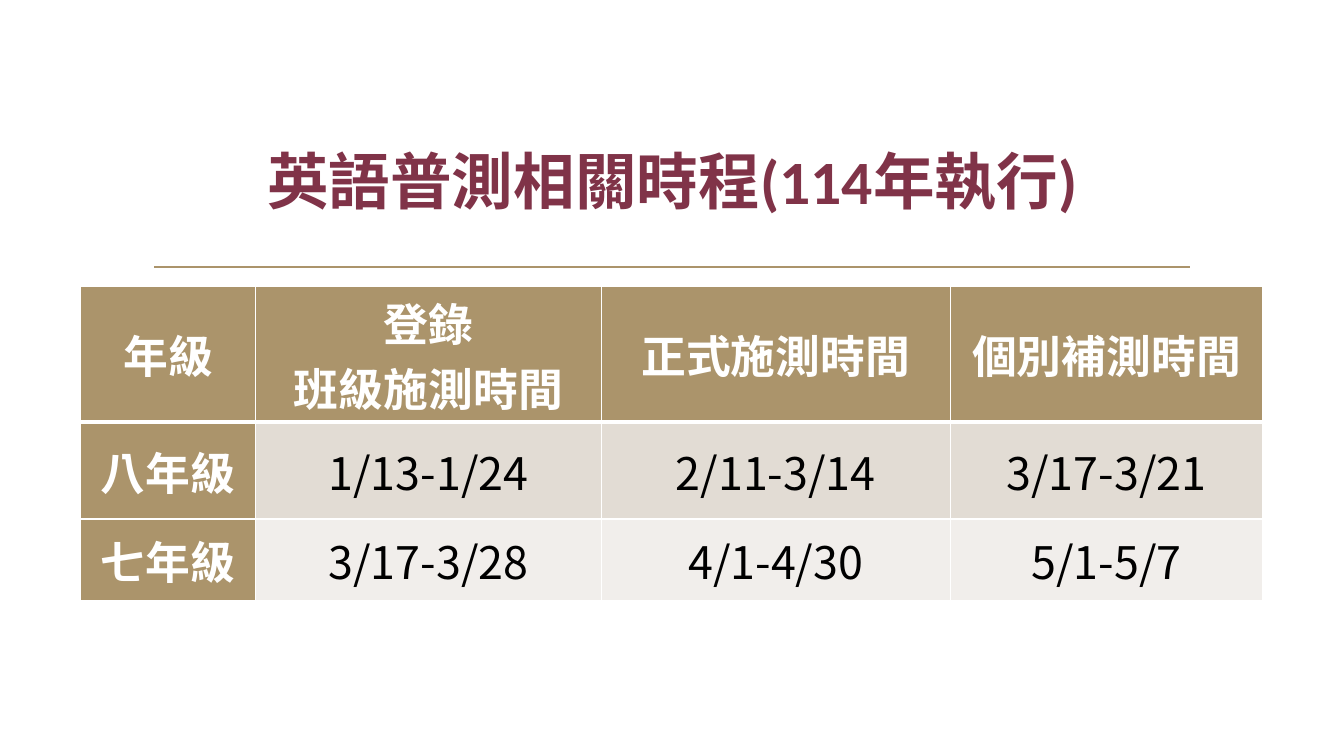
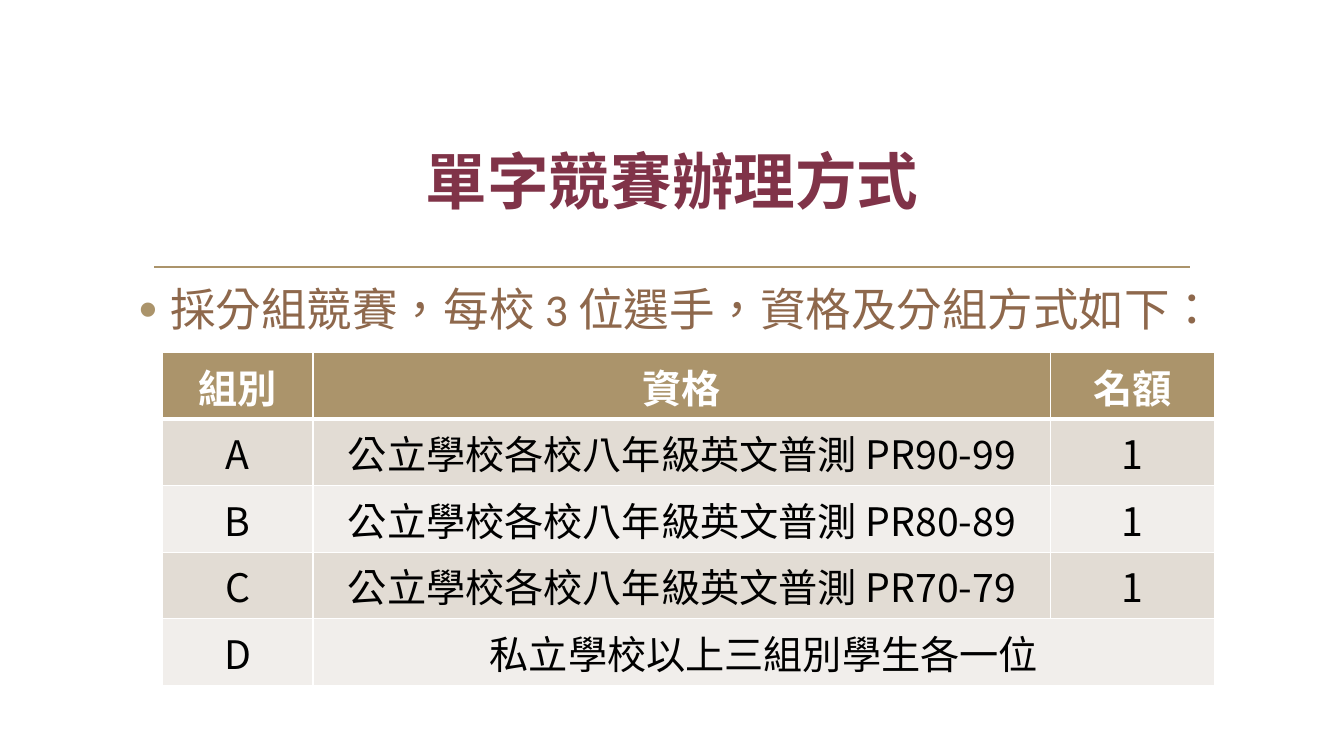
from lxml import etree
from pptx import Presentation
from pptx.dml.color import RGBColor
from pptx.enum.shapes import MSO_CONNECTOR
from pptx.enum.text import MSO_ANCHOR, MSO_AUTO_SIZE, PP_ALIGN
from pptx.oxml.ns import qn
from pptx.util import Pt

CENTER, LEFT = PP_ALIGN.CENTER, PP_ALIGN.LEFT
MIDDLE, TOP = MSO_ANCHOR.MIDDLE, MSO_ANCHOR.TOP
STRAIGHT = MSO_CONNECTOR.STRAIGHT
NO_AUTOFIT = MSO_AUTO_SIZE.NONE

# Shared look
GOLD, WINE, BROWN = "AB946B", "803348", "8E684C"
WHITE, BLACK = "FFFFFF", "000000"
BANDS = ("E2DCD4", "F1EEEB")
LATIN, CJK = "Calibri", "Noto Sans CJK SC"
TITLE_BOX = (102.24, 77.04, 756, 102.96)
RULE_LEFT, RULE_RIGHT, RULE_Y = 110.16, 850.32, 190.8

# Content
SCHEDULE_TITLE = "英語普測相關時程(114年執行)"
SCHEDULE = [
    ("年級", "登錄\n班級施測時間", "正式施測時間", "個別補測時間"),
    ("八年級", "1/13-1/24", "2/11-3/14", "3/17-3/21"),
    ("七年級", "3/17-3/28", "4/1-4/30", "5/1-5/7"),
]
CONTEST_TITLE = "單字競賽辦理方式"
CONTEST_INTRO = "採分組競賽，每校 3 位選手，資格及分組方式如下："
GROUPS = [("A", "PR90-99"), ("B", "PR80-89"), ("C", "PR70-79")]
CONTEST = [
    ("組別", "資格", "名額"),
    *((group, f"公立學校各校八年級英文普測 {rank}", "1") for group, rank in GROUPS),
    ("D", "私立學校以上三組別學生各一位", None),
]


def rgb(value):
    return RGBColor.from_string(value)


def style_text(frame, size, color, font, bold=False, align=CENTER):
    for paragraph in frame.paragraphs:
        paragraph.alignment = align
        for run in paragraph.runs:
            run.font.size = Pt(size)
            run.font.bold = bold
            run.font.color.rgb = rgb(color)
            run.font.name = font
            properties = run._r.get_or_add_rPr()
            properties.set("lang", "zh-TW")
            etree.SubElement(properties, qn("a:ea"), typeface=CJK)


def add_titled_slide(deck, text):
    slide = deck.slides.add_slide(deck.slide_layouts[5])
    # Rule under the title
    rule = slide.shapes.add_connector(
        STRAIGHT, Pt(RULE_LEFT), Pt(RULE_Y), Pt(RULE_RIGHT), Pt(RULE_Y))
    rule.line.color.rgb = rgb(GOLD)
    rule.line.width = Pt(1.25)
    etree.SubElement(rule._element.spPr, qn("a:effectLst"))
    # Title
    title = slide.shapes.title
    title.left, title.top, title.width, title.height = map(Pt, TITLE_BOX)
    frame = title.text_frame
    frame.text = text
    frame.word_wrap = True
    frame.auto_size = NO_AUTOFIT
    frame.vertical_anchor = MIDDLE
    style_text(frame, 44, WINE, LATIN, bold=True)
    return slide


def add_bullet_line(slide, text, left, top, width, height):
    frame = slide.shapes.add_textbox(*map(Pt, (left, top, width, height))).text_frame
    frame.word_wrap = True
    frame.margin_right = 0
    frame.text = text
    paragraph = frame.paragraphs[0]
    paragraph.line_spacing = 0.9
    properties = paragraph._p.get_or_add_pPr()
    properties.set("marL", str(Pt(22.5)))
    properties.set("indent", str(-Pt(22.5)))
    bullet_color = etree.SubElement(properties, qn("a:buClr"))
    etree.SubElement(bullet_color, qn("a:srgbClr"), val=GOLD)
    etree.SubElement(properties, qn("a:buSzPct"), val="115000")
    etree.SubElement(properties, qn("a:buFont"), typeface="Arial")
    etree.SubElement(properties, qn("a:buChar"), char="•")
    style_text(frame, 32.5, BROWN, LATIN, align=LEFT)


def set_borders(cell, top, bottom):
    properties = cell._tc.get_or_add_tcPr()
    for side, width in (("lnL", 1), ("lnR", 1), ("lnT", top), ("lnB", bottom)):
        border = etree.SubElement(properties, qn(f"a:{side}"), w=str(Pt(width)))
        fill = etree.SubElement(border, qn("a:solidFill"))
        etree.SubElement(fill, qn("a:srgbClr"), val=WHITE)


def add_grid(slide, rows, left, top, widths, heights, size,
             anchor=TOP, margins=(7.2, 3.6), header_column=False):
    table = slide.shapes.add_table(
        len(rows), len(widths), Pt(left), Pt(top),
        Pt(sum(widths)), Pt(sum(heights))).table
    for column, width in zip(table.columns, widths):
        column.width = Pt(width)
    for r, (values, height) in enumerate(zip(rows, heights)):
        table.rows[r].height = Pt(height)
        for c, value in enumerate(values):
            cell = table.cell(r, c)
            header = r == 0 or (header_column and c == 0)
            set_borders(cell, 3 if r == 1 else 1, 3 if r == 0 else 1)
            cell.fill.solid()
            cell.fill.fore_color.rgb = rgb(GOLD if header else BANDS[(r - 1) % 2])
            if value is None:
                table.cell(r, c - 1).merge(cell)
                continue
            cell.vertical_anchor = anchor
            cell.margin_left = cell.margin_right = Pt(margins[0])
            cell.margin_top = cell.margin_bottom = Pt(margins[1])
            cell.text_frame.text = value
            style_text(cell.text_frame, size, WHITE if header else BLACK, CJK, header)


def main():
    deck = Presentation()
    deck.slide_width, deck.slide_height = Pt(960), Pt(540)

    # Test schedule
    schedule = add_titled_slide(deck, SCHEDULE_TITLE)
    add_grid(schedule, SCHEDULE, 57.6, 204.8, (125.2, 246.6, 249.6, 223),
             (96.5, 69.5, 58), 32, MIDDLE, (5, 0), header_column=True)

    # Vocabulary contest
    contest = add_titled_slide(deck, CONTEST_TITLE)
    add_bullet_line(contest, CONTEST_INTRO, 92.16, 201.6, 792, 81.4)
    add_grid(contest, CONTEST, 116.2, 252, (107.4, 527, 117),
             [47.5] * len(CONTEST), 28)

    deck.save("out.pptx")


if __name__ == "__main__":
    main()
